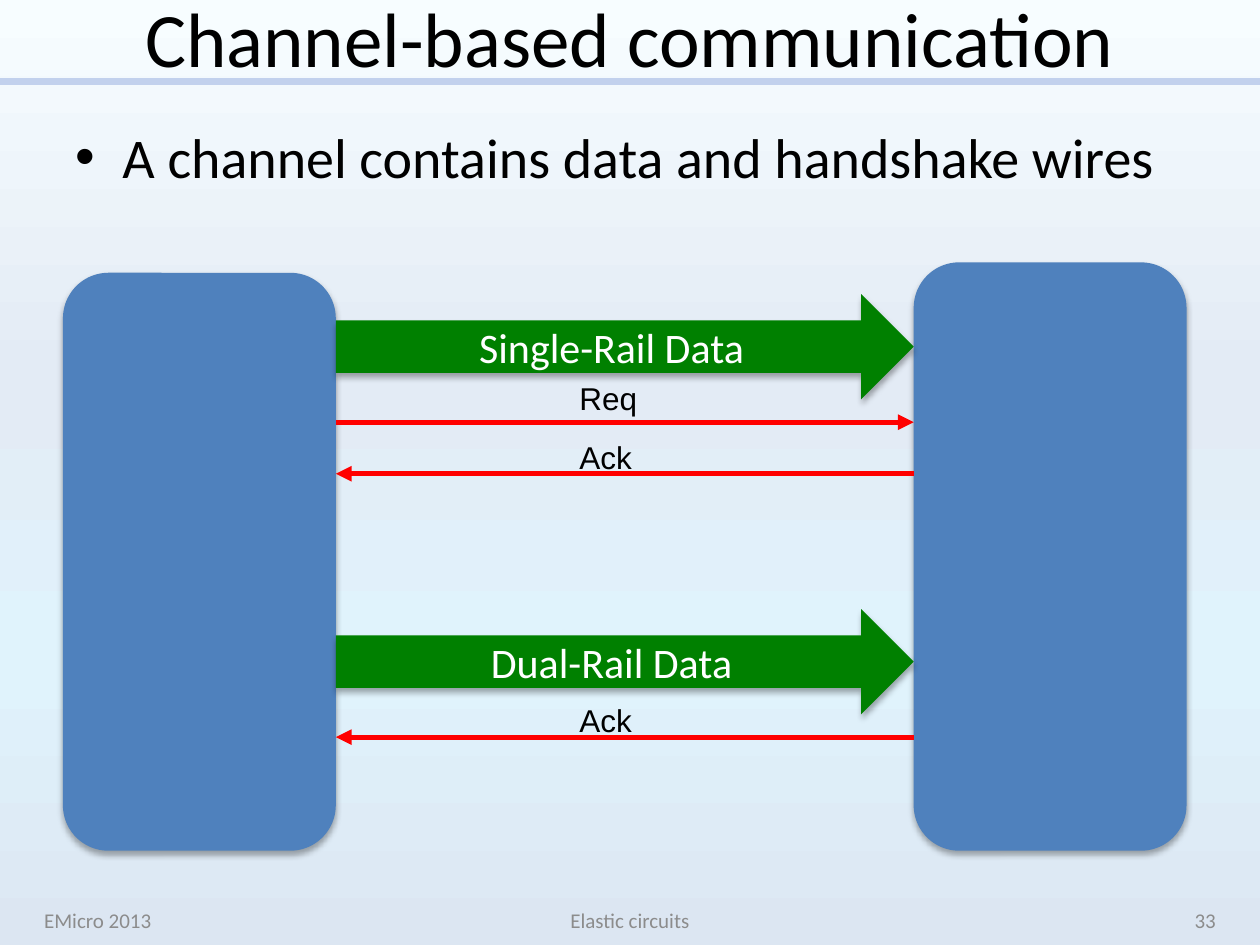
from dataclasses import dataclass
from lxml import etree
from pptx import Presentation
from pptx.dml.color import RGBColor
from pptx.enum.shapes import MSO_CONNECTOR as CONN, MSO_SHAPE as SHAPE
from pptx.enum.text import MSO_ANCHOR as ANCHOR, MSO_AUTO_SIZE as AUTO, PP_ALIGN as ALIGN
from pptx.oxml.ns import qn
from pptx.util import Cm, Pt


@dataclass(frozen=True)
class Theme:
    backdrop: tuple = ((0, "F7FDFF"), (40, "E3EBF5"), (70, "E0F3FC"), (100, "DCE6F2"))
    rule: str = "C2D1ED"
    block: str = "4F81BD"
    data: str = "008000"
    wire: str = "FF0000"
    ink: str = "000000"
    light: str = "FFFFFF"
    muted: str = "8C8C8C"
    font: str = "Calibri"
    label_font: str = "Arial"
    title: int = 44
    body: int = 32
    arrow: int = 24
    label: int = 18
    footer: int = 12


T = Theme()


def write(sp, text, size, color, align=ALIGN.LEFT, anchor=ANCHOR.MIDDLE, font=T.font, wrap=True):
    tf = sp.text_frame
    tf.text = text
    tf.word_wrap = wrap
    tf.vertical_anchor = anchor
    p = tf.paragraphs[0]
    p.alignment = align
    r = p.runs[0]
    r.font.name = font
    r.font.size = Pt(size)
    r.font.color.rgb = RGBColor.from_string(color)
    return tf


def add_line(x1, x2, y, color, width, arrow=False):
    cx = s.shapes.add_connector(CONN.STRAIGHT, Cm(x1), Cm(y), Cm(x2), Cm(y))
    cx.line.color.rgb = RGBColor.from_string(color)
    cx.line.width = Pt(width)
    if arrow:
        etree.SubElement(cx.line._get_or_add_ln(), qn("a:tailEnd"), type="triangle")
    etree.SubElement(cx._element.spPr, qn("a:effectLst"))


prs = Presentation()
prs.slide_width, prs.slide_height = Cm(25.4), Cm(19.05)
s = prs.slides.add_slide(prs.slide_layouts[6])

fill = s.background.fill
fill.gradient()
fill.gradient_angle = 270
stops = s._element.find(".//" + qn("a:gsLst"))
for stop in list(stops):
    stops.remove(stop)
for pos, color in T.backdrop:
    stop = etree.SubElement(stops, qn("a:gs"), pos=str(pos * 1000))
    etree.SubElement(stop, qn("a:srgbClr"), val=color)

add_line(0, 25.4, 1.65, T.rule, 4)

title = s.shapes.add_textbox(Cm(1.27), 0, Cm(22.86), Cm(1.47))
write(title, "Channel-based communication", T.title, T.ink, ALIGN.CENTER)

body = s.shapes.add_textbox(Cm(1.27), Cm(2.34), Cm(22.86), Cm(2.34))
tf = write(body, "A channel contains data and handshake wires", T.body, T.ink, anchor=ANCHOR.TOP)
pPr = tf.paragraphs[0]._p.get_or_add_pPr()
pPr.set("marL", str(Cm(0.95)))
pPr.set("indent", str(-Cm(0.95)))
etree.SubElement(pPr, qn("a:buFont"), typeface=T.label_font)
etree.SubElement(pPr, qn("a:buChar"), char="•")

SENDER, RECEIVER, BLOCK_W, BOTTOM = 1.27, 18.42, 5.5, 17.15
START = SENDER + BLOCK_W
SPAN = RECEIVER - START

solids = [
    (SHAPE.ROUNDED_RECTANGLE, SENDER, 5.5, BLOCK_W, BOTTOM - 5.5, T.block, ""),
    (SHAPE.ROUNDED_RECTANGLE, RECEIVER, 5.29, BLOCK_W, BOTTOM - 5.29, T.block, ""),
    (SHAPE.RIGHT_ARROW, START, 5.93, SPAN, 2.12, T.data, "Single-Rail Data"),
    (SHAPE.RIGHT_ARROW, START, 12.28, SPAN, 2.12, T.data, "Dual-Rail Data"),
]
for kind, x, y, w, h, color, text in solids:
    sp = s.shapes.add_shape(kind, Cm(x), Cm(y), Cm(w), Cm(h))
    sp.fill.solid()
    sp.fill.fore_color.rgb = RGBColor.from_string(color)
    sp.line.fill.background()
    sp.shadow.inherit = False
    effects = sp._element.spPr.find(qn("a:effectLst"))
    shadow = etree.SubElement(effects, qn("a:outerShdw"), blurRad=str(Pt(3.5)),
                              dist=str(Pt(2.2)), dir="5400000", rotWithShape="0")
    shade = etree.SubElement(shadow, qn("a:srgbClr"), val=T.ink)
    etree.SubElement(shade, qn("a:alpha"), val="32000")
    if text:
        write(sp, text, T.arrow, T.light, ALIGN.CENTER)

wires = [
    ("Req", START, RECEIVER, 8.51, 7.52, 1.68),
    ("Ack", RECEIVER, START, 9.55, 8.71, 1.57),
    ("Ack", RECEIVER, START, 14.86, 14, 1.57),
]
for text, x1, x2, y, label_y, w in wires:
    add_line(x1, x2, y, T.wire, 3, arrow=True)
    label = s.shapes.add_textbox(Cm(11.43), Cm(label_y), Cm(w), Cm(1.02))
    tf = write(label, text, T.label, T.ink, anchor=ANCHOR.TOP, font=T.label_font, wrap=False)
    tf.auto_size = AUTO.SHAPE_TO_FIT_TEXT

footers = [
    ("EMicro 2013", 0.64, 5.92, ALIGN.LEFT),
    ("Elastic circuits", 8.68, 8.04, ALIGN.CENTER),
    ("33", 18.84, 5.92, ALIGN.RIGHT),
]
for text, x, w, align in footers:
    footer = s.shapes.add_textbox(Cm(x), Cm(18.04), Cm(w), Cm(1.01))
    write(footer, text, T.footer, T.muted, align)

prs.save("out.pptx")
